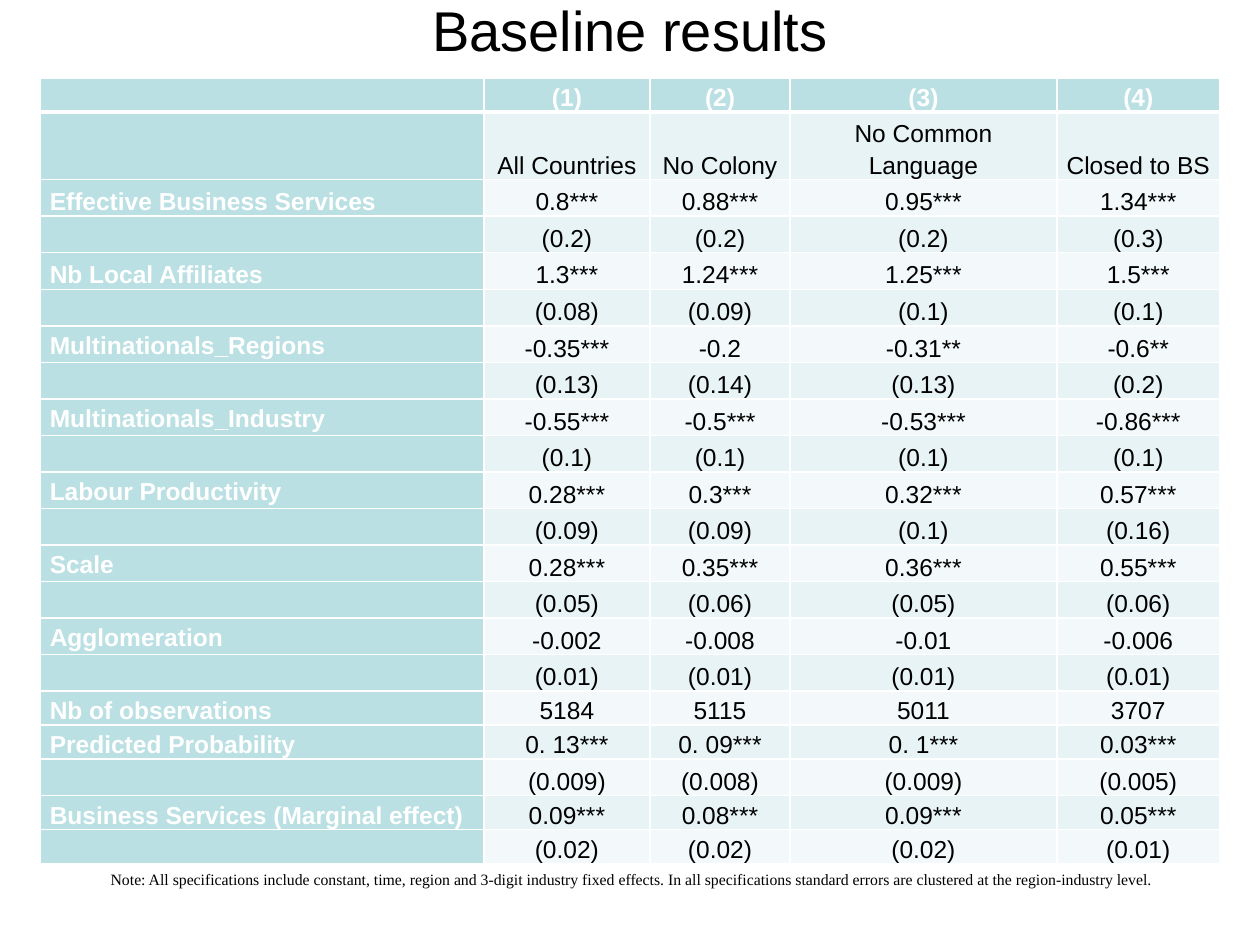
import pptx
import pptx.util
import pptx.dml.color
import pptx.enum.text
import pptx.oxml
import pptx.oxml.ns
from lxml import etree

Inches, Pt = pptx.util.Inches, pptx.util.Pt
RGBColor = pptx.dml.color.RGBColor
ANCHOR, ALIGN = pptx.enum.text.MSO_ANCHOR, pptx.enum.text.PP_ALIGN

BLACK = RGBColor(0x00, 0x00, 0x00)
WHITE = RGBColor(0xFF, 0xFF, 0xFF)
TEAL = RGBColor(0xBB, 0xE0, 0xE3)
BAND_DARK = RGBColor(0xE7, 0xF3, 0xF4)
BAND_LIGHT = RGBColor(0xF3, 0xF9, 0xFA)

COL_WIDTHS = [3.52, 1.32, 1.11, 2.12, 1.29]
ROW_HEIGHT, SHORT_HEIGHT = 0.29, 0.27
SHORT_ROWS = {0, 16, 17, 19, 20}
MIDDLE_LABELS = range(6, 15, 2)

RESULTS = [
    ("", "(1)", "(2)", "(3)", "(4)"),
    ("", "All Countries", "No Colony", "No Common Language", "Closed to BS"),
    ("Effective Business Services", "0.8***", "0.88***", "0.95***", "1.34***"),
    ("", "(0.2)", "(0.2)", "(0.2)", "(0.3)"),
    ("Nb Local Affiliates", "1.3***", "1.24***", "1.25***", "1.5***"),
    ("", "(0.08)", "(0.09)", "(0.1)", "(0.1)"),
    ("Multinationals_Regions", "-0.35***", "-0.2", "-0.31**", "-0.6**"),
    ("", "(0.13)", "(0.14)", "(0.13)", "(0.2)"),
    ("Multinationals_Industry", "-0.55***", "-0.5***", "-0.53***", "-0.86***"),
    ("", "(0.1)", "(0.1)", "(0.1)", "(0.1)"),
    ("Labour Productivity", "0.28***", "0.3***", "0.32***", "0.57***"),
    ("", "(0.09)", "(0.09)", "(0.1)", "(0.16)"),
    ("Scale", "0.28***", "0.35***", "0.36***", "0.55***"),
    ("", "(0.05)", "(0.06)", "(0.05)", "(0.06)"),
    ("Agglomeration", "-0.002", "-0.008", "-0.01", "-0.006"),
    ("", "(0.01)", "(0.01)", "(0.01)", "(0.01)"),
    ("Nb of observations", "5184", "5115", "5011", "3707"),
    ("Predicted Probability", "0. 13***", "0. 09***", "0. 1***", "0.03***"),
    ("", "(0.009)", "(0.008)", "(0.009)", "(0.005)"),
    ("Business Services (Marginal effect)", "0.09***", "0.08***", "0.09***", "0.05***"),
    ("", "(0.02)", "(0.02)", "(0.02)", "(0.01)"),
]
NOTE = ("Note: All specifications include constant, time, region and 3-digit industry "
        "fixed effects. In all specifications standard errors are clustered at the "
        "region-industry level.")


def style_text(p, text, font, size, color, bold=False):
    """Set the text of a paragraph and format its run."""
    p.text = text
    for r in p.runs:
        r.font.name = font
        r.font.size = Pt(size)
        r.font.bold = bold
        r.font.color.rgb = color


def add_text(s, box, text, font, size, align, anchor, top_inset):
    """Add one line of text in the given box."""
    tf = s.shapes.add_textbox(*map(Inches, box)).text_frame
    tf.word_wrap = True
    tf.vertical_anchor = anchor
    tf.margin_top = Inches(top_inset)
    p = tf.paragraphs[0]
    style_text(p, text, font, size, BLACK)
    p.alignment = align


def set_borders(cell, bottom):
    """Draw white borders, with the bottom one in the given width."""
    tcPr = cell._tc.get_or_add_tcPr()
    for i, (side, width) in enumerate([("L", 1), ("R", 1), ("T", 1), ("B", bottom)]):
        ln = pptx.oxml.parse_xml(
            f'<a:ln{side} {pptx.oxml.ns.nsdecls("a")} w="{Pt(width)}">'
            f'<a:solidFill><a:srgbClr val="{WHITE}"/></a:solidFill></a:ln{side}>')
        tcPr.insert(i, ln)


def fill_cell(cell, row, col, text):
    """Write and style one cell of the results table."""
    heading = row == 0 or col == 0
    cell.margin_left = cell.margin_right = Pt(5.4)
    cell.margin_top = cell.margin_bottom = 0
    middle = col == 0 and row in MIDDLE_LABELS
    cell.vertical_anchor = ANCHOR.MIDDLE if middle else ANCHOR.BOTTOM
    cell.fill.solid()
    cell.fill.fore_color.rgb = TEAL if heading else BAND_DARK if row % 2 else BAND_LIGHT
    set_borders(cell, 3 if row == 0 else 1)
    p = cell.text_frame.paragraphs[0]
    if text:
        style_text(p, text, "Arial", 14, WHITE if heading else BLACK, heading)
        p.alignment = ALIGN.CENTER if col else ALIGN.LEFT
        p.line_spacing = 1.15
    else:
        end = etree.SubElement(p._p, pptx.oxml.ns.qn("a:endParaRPr"))
        end.set("sz", "1400")


def add_results(s, box):
    """Add the regression results table in the given box."""
    frame = s.shapes.add_table(len(RESULTS), len(COL_WIDTHS), *map(Inches, box))
    table = frame.table
    for column, width in zip(table.columns, COL_WIDTHS):
        column.width = Inches(width)
    for i, values in enumerate(RESULTS):
        table.rows[i].height = Inches(SHORT_HEIGHT if i in SHORT_ROWS else ROW_HEIGHT)
        for j, text in enumerate(values):
            fill_cell(table.cell(i, j), i, j, text)
    frame.height = Inches(box[3])


def main():
    """Build the slide and save it."""
    prs = pptx.Presentation()
    prs.slide_width, prs.slide_height = Inches(10), Inches(7.5)
    s = prs.slides.add_slide(prs.slide_layouts[6])
    add_text(s, (0, -0.29, 10, 1.05), "Baseline results", "Arial", 32,
             ALIGN.CENTER, ANCHOR.MIDDLE, 0.05)
    add_text(s, (0.78, 6.87, 10, 0.5), NOTE, "Times New Roman", 9,
             ALIGN.LEFT, ANCHOR.TOP, 0.03)
    add_results(s, (0.32, 0.62, 9.37, 6.22))
    prs.save("out.pptx")


if __name__ == "__main__":
    main()
